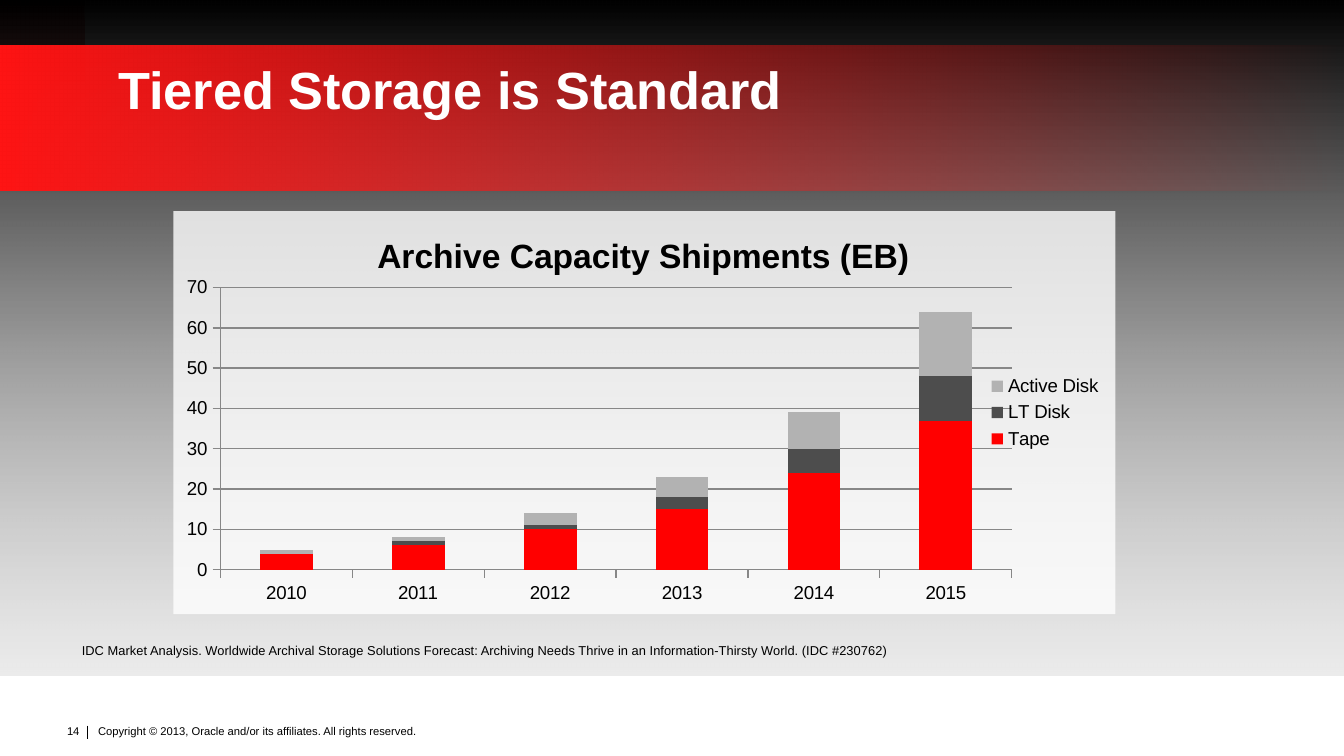
import pptx
import pptx.chart.data
import pptx.dml.color
import pptx.enum.chart
import pptx.enum.shapes
import pptx.enum.text
import pptx.oxml
import pptx.oxml.ns
import pptx.util

WIDE = 10
HIGH = WIDE * 9 / 16
FONT = "Arial"
HUES = {"black": "000000", "white": "FFFFFF", "red": "FF0000", "flame": "FF1414",
        "wine": "AA0000", "dark": "4D4D4D", "light": "B2B2B2", "mist": "C9C9C9",
        "grid": "878787"}

TITLE = "Tiered Storage is Standard"
HEAD = "Archive Capacity Shipments (EB)"
YEARS = ["2010", "2011", "2012", "2013", "2014", "2015"]
SERIES = [("Tape", "red", (4, 6, 10, 15, 24, 37)),
          ("LT Disk", "dark", (0, 1, 1, 3, 6, 11)),
          ("Active Disk", "light", (1, 1, 3, 5, 9, 16))]
# text, box, format
NOTES = [
    ("Copyright © 2013, Oracle and/or its affiliates. All rights reserved.",
     (0.69, 5.37, 2.74, 0.24), dict(size=6, pad=(0.04, 0.02))),
    ("14", (0.38, 5.34, 0.31, 0.2), dict(size=6, align="RIGHT")),
    ("IDC Market Analysis. Worldwide Archival Storage Solutions Forecast: "
     "Archiving Needs Thrive in an Information-Thirsty World. (IDC #230762)",
     (0.51, 4.71, 7.19, 0.24), dict(size=12, rise=30)),
]
# box, angle, stops of (position, colour, opacity)
BANDS = [
    ((0, 0, 0.63, 0.61), 270, [(0.2, "wine", 100), (0.9, "flame", 100)]),
    ((0, 0, WIDE, 5.03), 270, [(0, "black", 100), (1, "mist", 36)]),
    ((-0.01, 0.34, 10.01, 1.08), 0, [(0, "flame", 100), (1, "flame", 0)]),
]


def rgb(name):
    return pptx.dml.color.RGBColor.from_string(HUES[name])


def inch(box):
    return [pptx.util.Inches(n) for n in box]


def tag(xml):
    """Parse XML whose first %s stands for the namespaces."""
    return pptx.oxml.parse_xml(xml % pptx.oxml.ns.nsdecls("a", "c"))


def fade(node, share):
    """Give a colour element its opacity in percent."""
    if share < 100:
        node.append(tag(f'<a:alpha %s val="{share * 1000}"/>'))


def style(font, size, hue="black", bold=False):
    font.name, font.size, font.bold = FONT, pptx.util.Pt(size), bold
    font.color.rgb = rgb(hue)


def write(shape, text, size=12, hue="black", bold=False, align="LEFT",
          pad=(0.1, 0.05), rise=0, lead=None):
    frame = shape.text_frame
    frame.word_wrap = True
    frame.auto_size = pptx.enum.text.MSO_AUTO_SIZE.NONE
    frame.vertical_anchor = pptx.enum.text.MSO_ANCHOR.TOP
    frame.margin_left = frame.margin_right = pptx.util.Inches(pad[0])
    frame.margin_top = frame.margin_bottom = pptx.util.Inches(pad[1])
    para = frame.paragraphs[0]
    para.alignment = pptx.enum.text.PP_ALIGN[align]
    para.line_spacing = lead
    run = para.add_run()
    run.text = text
    style(run.font, size, hue, bold)
    if rise:
        run._r.get_or_add_rPr().set("baseline", str(rise * 1000))


def band(slide, box, angle, stops):
    shape = slide.shapes.add_shape(pptx.enum.shapes.MSO_SHAPE.RECTANGLE, *inch(box))
    shape.shadow.inherit = False
    shape.line.fill.background()
    shape.fill.gradient()
    shape.fill.gradient_angle = angle
    for stop, (place, hue, _) in zip(shape.fill.gradient_stops, stops):
        stop.position, stop.color.rgb = place, rgb(hue)
    nodes = list(shape._element.spPr.iter(pptx.oxml.ns.qn("a:srgbClr")))
    for node, (_, _, share) in zip(nodes, stops):
        fade(node, share)


def layout(node, *spots):
    """Replace the layout of a chart part by shares of the chart's size."""
    for old in node.findall(pptx.oxml.ns.qn("c:layout")):
        node.remove(old)
    inner = "".join(f'<c:{key} val="{val}"/>' for key, val in spots)
    return tag(f"<c:layout %s><c:manualLayout>{inner}</c:manualLayout></c:layout>")


def draw(slide):
    data = pptx.chart.data.CategoryChartData()
    data.categories = YEARS
    for name, _, vals in SERIES:
        data.add_series(name, vals)
    kind = pptx.enum.chart.XL_CHART_TYPE.COLUMN_STACKED
    chart = slide.shapes.add_chart(kind, *inch((1.29, 1.57, 7.01, 3)), data).chart
    style(chart.font, 10)

    chart.has_title = True
    run = chart.chart_title.text_frame.paragraphs[0].add_run()
    run.text = HEAD
    style(run.font, 18, bold=True)
    chart.chart_title.include_in_layout = False

    chart.has_legend = True
    chart.legend.position = pptx.enum.chart.XL_LEGEND_POSITION.RIGHT
    chart.legend.include_in_layout = False
    style(chart.legend.font, 10)

    plot = chart.plots[0]
    plot.gap_width, plot.overlap, plot.vary_by_categories = 150, 100, False
    for series, (_, hue, _) in zip(plot.series, SERIES):
        series.format.fill.solid()
        series.format.fill.fore_color.rgb = rgb(hue)

    rows = chart.value_axis
    rows.minimum_scale, rows.maximum_scale, rows.major_unit = 0, 70, 10
    rows.has_major_gridlines = True
    for axis in (chart.category_axis, rows):
        axis.major_tick_mark = pptx.enum.chart.XL_TICK_MARK.OUTSIDE
        style(axis.tick_labels.font, 10)
    for part in (chart.category_axis, rows, rows.major_gridlines):
        part.format.line.color.rgb = rgb("grid")
        part.format.line.width = pptx.util.Pt(0.75)

    space = chart._chartSpace
    area, head = space.chart.plotArea, chart.chart_title._element
    edge = ("xMode", "edge"), ("yMode", "edge")
    area.insert(0, layout(area, ("layoutTarget", "inner"), *edge,
                          ("x", 0.05), ("y", 0.19), ("w", 0.84), ("h", 0.7)))
    head.find(pptx.oxml.ns.qn("c:tx")).addnext(
        layout(head, *edge, ("x", 0.21), ("y", 0.04)))
    back = tag(f'<c:spPr %s><a:solidFill><a:srgbClr val="{HUES["white"]}"/>'
               "</a:solidFill><a:ln><a:noFill/></a:ln></c:spPr>")
    fade(back[0][0], 80)
    space.chart.addnext(back)


def main():
    deck = pptx.Presentation()
    deck.slide_width, deck.slide_height = inch((WIDE, HIGH))
    slide = deck.slides.add_slide(deck.slide_layouts[5])
    for item in BANDS:
        band(slide, *item)

    title = slide.shapes.title
    title.left, title.top, title.width, title.height = inch((0.88, 0.48, 9, 0.84))
    write(title, TITLE, size=28, hue="white", bold=True, pad=(0, 0), lead=0.9)
    slide.shapes._spTree.append(title._element)

    for text, box, form in NOTES:
        write(slide.shapes.add_textbox(*inch(box)), text, **form)
    rule = slide.shapes.add_connector(
        pptx.enum.shapes.MSO_CONNECTOR.STRAIGHT, *inch((0.65, 5.4, 0.65, 5.5)))
    rule.line.color.rgb = rgb("black")
    rule.line.width = pptx.util.Pt(0.5)
    rule._element.spPr.append(tag("<a:effectLst %s/>"))
    draw(slide)
    deck.save("out.pptx")


if __name__ == "__main__":
    main()
